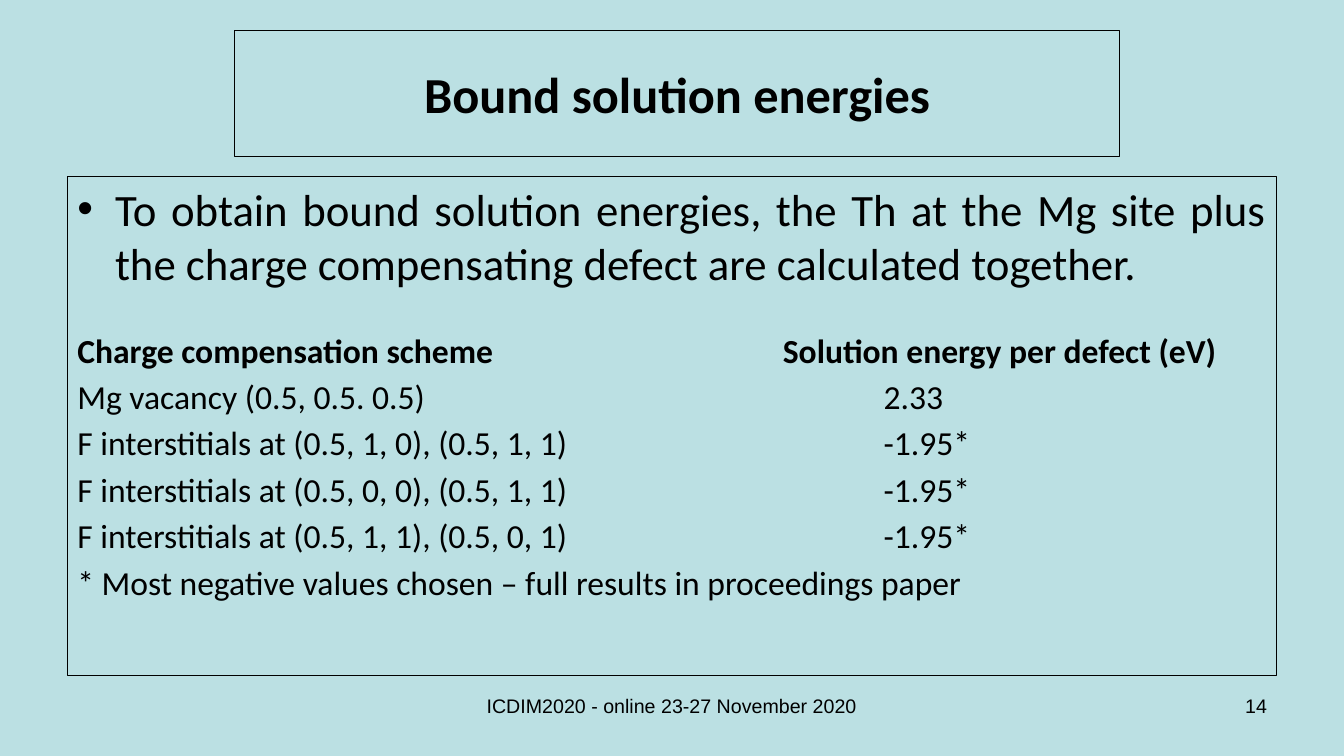
from lxml import etree
from pptx import Presentation
from pptx import util as u
from pptx.dml import color
from pptx.enum import shapes, text
from pptx.oxml import ns

Cm, Pt = u.Cm, u.Pt
ALIGN, ANCHOR = text.PP_ALIGN, text.MSO_ANCHOR
INK, PALE_BLUE = "000000", "BBE0E3"


def paint(target, hex_color):
    target.solid()
    target.fore_color.rgb = color.RGBColor.from_string(hex_color)


def write(paragraph, words, font, layout):
    run = paragraph.add_run()
    run.text = words
    for key, value in font.items():
        setattr(run.font, key, value)
    paint(run.font.fill, INK)
    for key, value in layout.items():
        setattr(paragraph, key, value)


deck = Presentation()
deck.slide_width, deck.slide_height = Cm(33.87), Cm(19.05)
slide = deck.slides.add_slide(deck.slide_layouts[6])
paint(slide.background.fill, PALE_BLUE)

# Outlined frames for the title and the body
frames = []
for left, top, width, height, anchor in (
    (5.92, 0.76, 22.3, 3.18, ANCHOR.MIDDLE),
    (1.7, 4.45, 30.48, 12.57, ANCHOR.TOP),
):
    frame = slide.shapes.add_shape(
        shapes.MSO_SHAPE.RECTANGLE, Cm(left), Cm(top), Cm(width), Cm(height))
    frame.shadow.inherit = False
    frame.fill.background()
    paint(frame.line.fill, INK)
    frame.line.width = Pt(0.75)
    frame.text_frame.word_wrap = True
    frame.text_frame.vertical_anchor = anchor
    frames.append(frame.text_frame)
title, body = frames

write(title.paragraphs[0], "Bound solution energies",
      {"name": "Calibri", "size": Pt(36), "bold": True},
      {"alignment": ALIGN.CENTER})

# Bulleted introduction
intro = body.paragraphs[0]
intro_format = intro._p.get_or_add_pPr()
intro_format.set("marL", str(Cm(0.95)))
intro_format.set("indent", str(-Cm(0.95)))
etree.SubElement(intro_format, ns.qn("a:buFont"), typeface="Arial")
etree.SubElement(intro_format, ns.qn("a:buChar"), char="•")
write(intro,
      "To obtain bound solution energies, the Th at the Mg site plus "
      "the charge compensating defect are calculated together.",
      {"name": "Calibri", "size": Pt(32)}, {"alignment": ALIGN.JUSTIFY})

# Schemes and energies, aligned by one tab stop per line
HEADING_TAB, VALUE_TAB = Cm(17.78), Cm(20.32)
energies = (
    ("Charge compensation scheme\tSolution energy per defect (eV)", HEADING_TAB),
    ("Mg vacancy (0.5, 0.5. 0.5)\t2.33", VALUE_TAB),
    ("F interstitials at (0.5, 1, 0), (0.5, 1, 1)\t-1.95*", VALUE_TAB),
    ("F interstitials at (0.5, 0, 0), (0.5, 1, 1)\t-1.95*", VALUE_TAB),
    ("F interstitials at (0.5, 1, 1), (0.5, 0, 1)\t-1.95*", VALUE_TAB),
    ("* Most negative values chosen – full results in proceedings paper", None),
)
for words, tab in energies:
    line = body.add_paragraph()
    if tab:
        tabs = etree.SubElement(line._p.get_or_add_pPr(), ns.qn("a:tabLst"))
        etree.SubElement(tabs, ns.qn("a:tab"), pos=str(tab), algn="l")
    is_heading = tab == HEADING_TAB
    write(line, words,
          {"name": "Calibri", "size": Pt(24), "bold": is_heading},
          {"alignment": ALIGN.JUSTIFY,
           "space_before": Pt(29 if is_heading else 4.3)})

# Footer and slide number
for words, left, width, alignment in (
    ("ICDIM2020 - online 23-27 November 2020", 10.16, 13.54, ALIGN.CENTER),
    ("14", 24.28, 7.9, ALIGN.RIGHT),
):
    footer = slide.shapes.add_textbox(
        Cm(left), Cm(17.35), Cm(width), Cm(1.32)).text_frame
    footer.word_wrap = True
    write(footer.paragraphs[0], words, {"name": "Arial", "size": Pt(14)},
          {"alignment": alignment})

deck.save("out.pptx")
